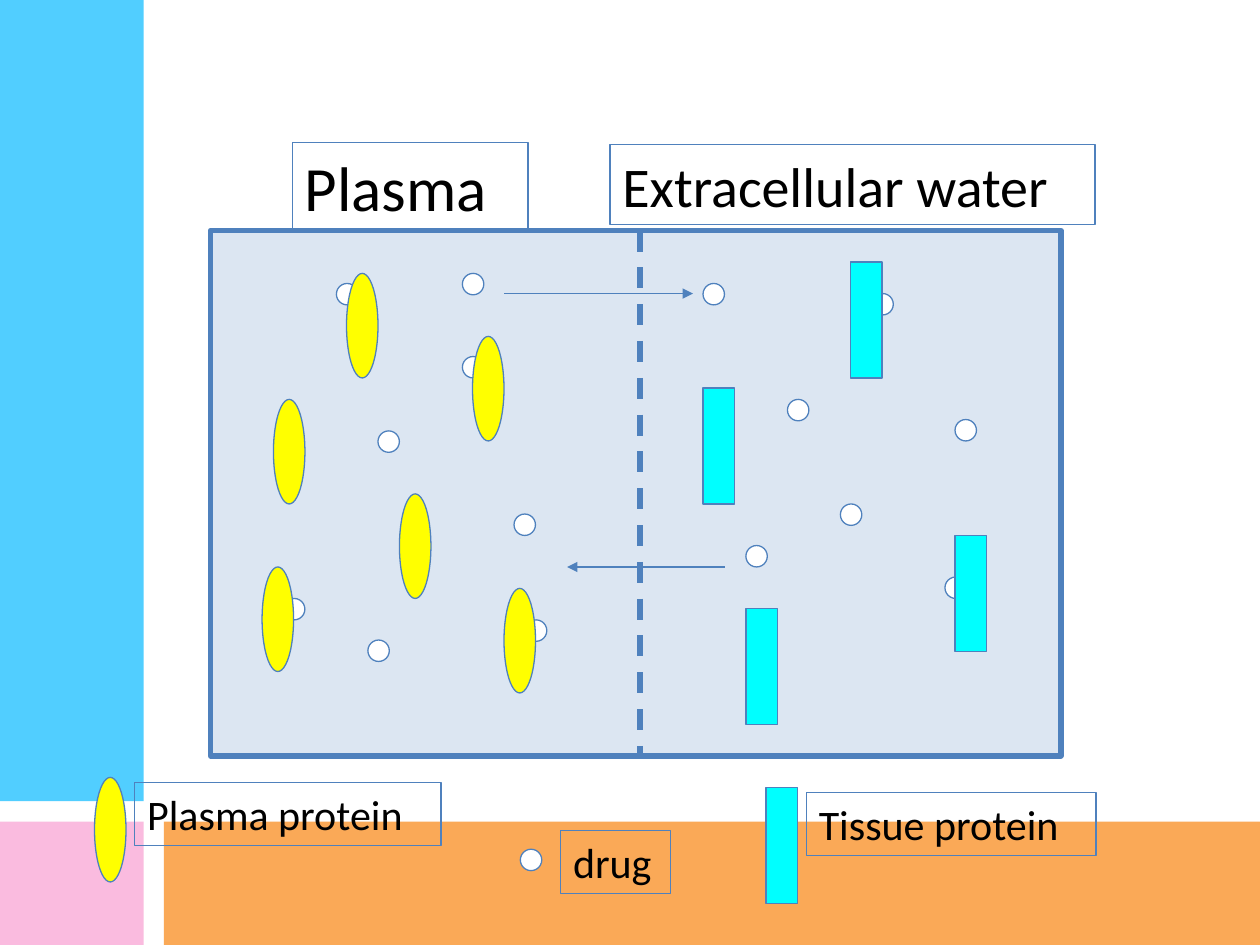
from typing import NamedTuple

from lxml import etree
from pptx import Presentation
from pptx.dml.color import RGBColor
from pptx.enum.dml import MSO_LINE
from pptx.enum.shapes import MSO_CONNECTOR, MSO_SHAPE
from pptx.enum.text import MSO_AUTO_SIZE
from pptx.oxml.ns import qn
from pptx.util import Inches, Pt

RECT = MSO_SHAPE.RECTANGLE
OVAL = MSO_SHAPE.OVAL
STRAIGHT = MSO_CONNECTOR.STRAIGHT
DASH = MSO_LINE.DASH
GROW = MSO_AUTO_SIZE.SHAPE_TO_FIT_TEXT

BLACK = RGBColor(0x00, 0x00, 0x00)
WHITE = RGBColor(0xFF, 0xFF, 0xFF)
BLUE = RGBColor(0x4F, 0x81, 0xBD)
PALE = RGBColor(0xDC, 0xE6, 0xF2)
YELLOW = RGBColor(0xFF, 0xFF, 0x00)
CYAN = RGBColor(0x00, 0xFF, 0xFF)
ORANGE = RGBColor(0xF9, 0x94, 0x2E)
PINK = RGBColor(0xF9, 0xAB, 0xD7)
SKY = RGBColor(0x26, 0xC2, 0xFF)


class Box(NamedTuple):
    left: float
    top: float
    width: float
    height: float


class Kind(NamedTuple):
    form: MSO_SHAPE
    width: float
    height: float
    fill: RGBColor
    spots: list[tuple[float, float]]


class Label(NamedTuple):
    text: str
    box: Box
    size: int


BANDS = [
    (Box(1.3, 6.52, 8.7, 0.98), ORANGE),
    (Box(0, 6.52, 1.14, 0.98), PINK),
    (Box(0, 0, 1.14, 6.36), SKY),
]
PANEL = Box(1.67, 1.83, 6.75, 4.17)
WALL = 5.08

# The last spot of each kind belongs to the legend.
KINDS = [
    Kind(OVAL, 0.17, 0.17, WHITE, [
        (4.17, 4.92), (3.67, 2.83), (2.67, 2.25), (3, 3.42), (6.92, 2.33),
        (2.92, 5.08), (4.08, 4.08), (7.5, 4.58), (2.25, 4.75), (3.67, 2.17),
        (5.58, 2.25), (6.25, 3.17), (5.92, 4.33), (6.67, 4), (7.58, 3.33),
        (4.13, 6.74)]),
    Kind(OVAL, 0.25, 0.83, YELLOW, [
        (3.17, 3.92), (2.75, 2.17), (2.08, 4.5), (4, 4.67), (3.75, 2.67),
        (2.17, 3.17), (0.75, 6.17)]),
    Kind(RECT, 0.25, 0.92, CYAN, [
        (7.58, 4.25), (5.58, 3.08), (5.92, 4.83), (6.75, 2.08),
        (6.08, 6.25)]),
]
LABELS = [
    Label("Plasma", Box(2.32, 1.13, 1.87, 0.7), 36),
    Label("Extracellular water", Box(4.84, 1.15, 3.85, 0.63), 32),
    Label("Plasma protein", Box(1.07, 6.21, 2.43, 0.5), 24),
    Label("Tissue protein", Box(6.4, 6.29, 2.3, 0.5), 24),
    Label("drug", Box(4.45, 6.59, 0.87, 0.5), 24),
]


def add_form(slide, form: MSO_SHAPE, box: Box, fill: RGBColor,
             line: float = 0.75, alpha: int = 100) -> None:
    """Draw a filled shape; a line of 0 points means no outline."""
    shape = slide.shapes.add_shape(form, *map(Inches, box))
    shape.shadow.inherit = False
    shape.fill.solid()
    shape.fill.fore_color.rgb = fill
    if alpha < 100:
        color = shape.fill._xPr.find(f".//{qn('a:srgbClr')}")
        etree.SubElement(color, qn("a:alpha"), val=str(alpha * 1000))
    if line:
        shape.line.color.rgb = BLUE
        shape.line.width = Pt(line)
    else:
        shape.line.fill.background()


def add_line(slide, start: tuple[float, float], end: tuple[float, float],
             width: float = 0.75, dash: bool = False,
             arrow: bool = False) -> None:
    link = slide.shapes.add_connector(
        STRAIGHT, *map(Inches, (*start, *end)))
    link.line.color.rgb = BLUE
    link.line.width = Pt(width)
    if dash:
        link.line.dash_style = DASH
    if arrow:
        etree.SubElement(link.line._get_or_add_ln(), qn("a:tailEnd"),
                         type="triangle")
    etree.SubElement(link._element.spPr, qn("a:effectLst"))


def add_text(slide, text: str, *, box: Box, size: int,
             font: str = "Calibri", color: RGBColor = BLACK) -> None:
    shape = slide.shapes.add_textbox(*map(Inches, box))
    shape.line.color.rgb = BLUE
    shape.line.width = Pt(0.75)
    frame = shape.text_frame
    frame.word_wrap = False
    frame.auto_size = GROW
    run = frame.paragraphs[0].add_run()
    run.text = text
    run.font.name = font
    run.font.size = Pt(size)
    run.font.color.rgb = color


def main() -> None:
    deck = Presentation()
    deck.slide_width, deck.slide_height = Inches(10), Inches(7.5)
    slide = deck.slides.add_slide(deck.slide_layouts[6])

    for box, fill in BANDS:
        add_form(slide, RECT, box, fill, line=0, alpha=80)
    add_form(slide, RECT, PANEL, PALE, line=3)
    add_line(slide, (WALL, PANEL.top), (WALL, PANEL.top + PANEL.height),
             width=3, dash=True)
    for kind in KINDS:
        for left, top in kind.spots:
            add_form(slide, kind.form,
                     Box(left, top, kind.width, kind.height), kind.fill)
    add_line(slide, (4, 2.33), (5.5, 2.33), arrow=True)
    add_line(slide, (5.75, 4.5), (4.5, 4.5), arrow=True)
    for label in LABELS:
        add_text(slide, label.text, box=label.box, size=label.size)

    deck.save("out.pptx")


if __name__ == "__main__":
    main()
